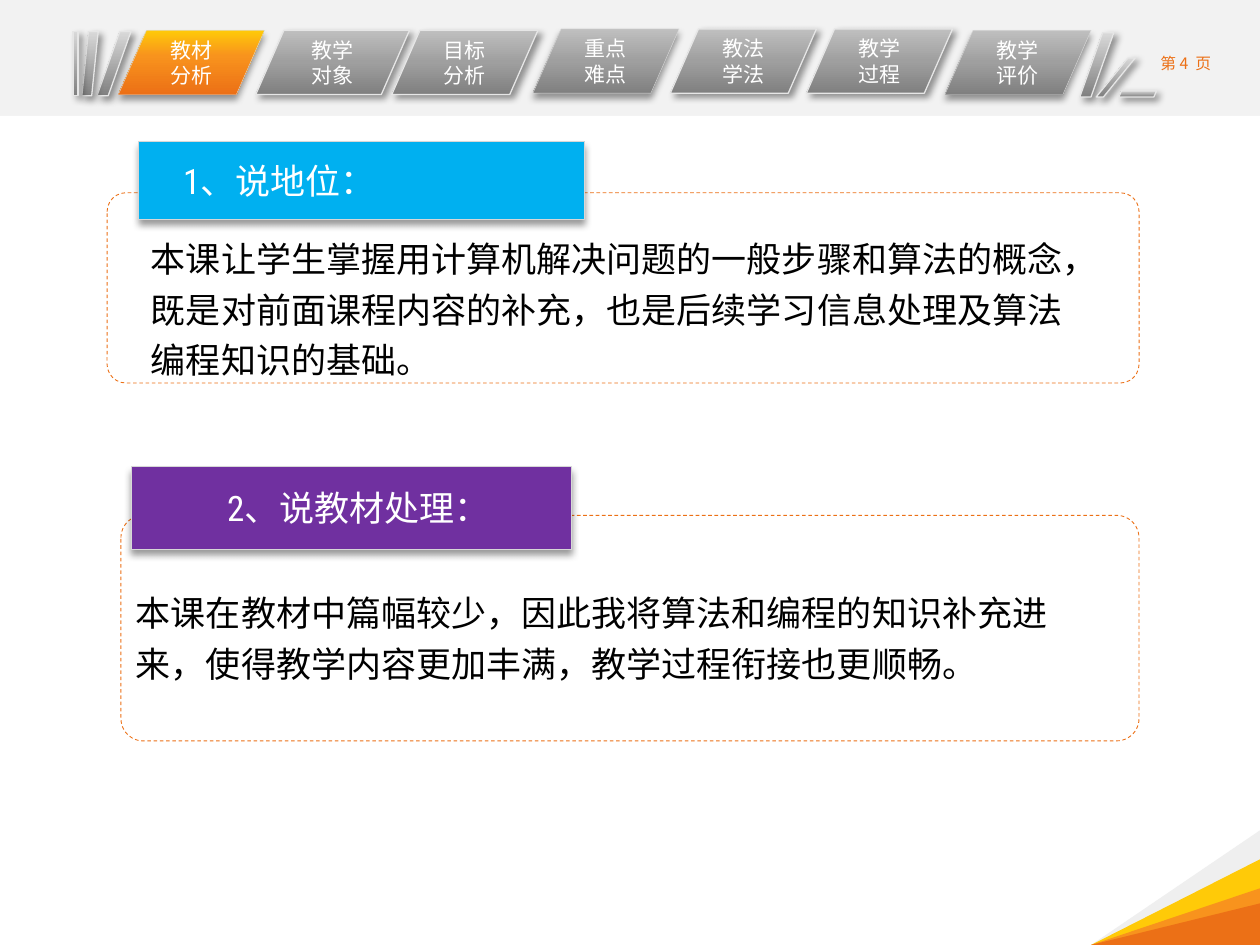
from dataclasses import dataclass

from lxml.etree import SubElement
from pptx import Presentation
from pptx.dml.color import RGBColor as Color
from pptx.enum.dml import MSO_LINE as Dash
from pptx.enum.shapes import MSO_SHAPE as Shape
from pptx.enum.text import MSO_ANCHOR as Anchor, MSO_AUTO_SIZE as AutoSize, PP_ALIGN as Align
from pptx.oxml.ns import qn
from pptx.util import Pt

PX = 9144  # 100 px to the inch
WIDTH, HEIGHT = 1000, 750


@dataclass(frozen=True)
class Theme:
    band: str = "F2F2F2"
    white: str = "FFFFFF"
    black: str = "000000"
    orange: str = "EC7016"
    blue: str = "00B0F0"
    purple: str = "7030A0"
    soft_line: tuple = ("E6E6E6", 0.75)
    fine_line: tuple = ("D7D7D7", 0.25)
    dash_line: tuple = ("EC7016", 0.5)
    bar: tuple = ((0, "808080"), (100, "D9D9D9"))
    tab: tuple = ((0, "BFBFBF"), (50, "9F9F9F"), (100, "808080"))
    active: tuple = ((0, "FFCA08"), (40, "F8931D"), (100, "EC7016"))
    rays: tuple = ("EFEFEF", "FFCA08", "F8931D", "EC7016")
    cjk: str = "Noto Sans CJK SC"
    latin: str = "Roboto Condensed"
    body: int = 20
    label: int = 12
    small: int = 9


def assign(target, values):
    for name, value in values.items():
        setattr(target, name, value)


class Painter:
    def __init__(self, deck, theme):
        self.theme = theme
        self.page = deck.slides.add_slide(deck.slide_layouts[6])
        self.canvas = self.page.shapes

    def background(self, color):
        fill = self.page.background.fill
        fill.solid()
        fill.fore_color.rgb = Color.from_string(color)

    def group(self):
        self.canvas = self.page.shapes.add_group_shape().shapes

    def shape(self, kind, at, fill=None, line=None, adjust=None, angle=90,
              shadow=None, dash=None, flip=False):
        box = self.canvas.add_shape(kind, *(value * PX for value in at))
        if adjust is not None:
            box.adjustments[0] = adjust
        if flip:
            box._element.spPr.find(qn("a:xfrm")).set("flipH", "1")
        if fill is None:
            box.fill.background()
        elif isinstance(fill, str):
            box.fill.solid()
            box.fill.fore_color.rgb = Color.from_string(fill)
        else:
            self.gradient(box, fill, angle)
        if line:
            box.line.color.rgb = Color.from_string(line[0])
            assign(box.line, {"width": Pt(line[1]), "dash_style": dash})
        else:
            box.line.fill.background()
        box.shadow.inherit = False
        if shadow is not None:
            self.shadow(box, shadow)
        return box

    def gradient(self, box, stops, angle):
        box.fill.gradient()
        box.fill.gradient_angle = 360 - angle
        listing = box._element.spPr.find(qn("a:gradFill")).find(qn("a:gsLst"))
        for stop in list(listing):
            listing.remove(stop)
        for position, color in stops:
            stop = SubElement(listing, qn("a:gs"), pos=str(position * 1000))
            SubElement(stop, qn("a:srgbClr"), val=color)

    def shadow(self, box, direction):
        effects = box._element.spPr.find(qn("a:effectLst"))
        outer = SubElement(effects, qn("a:outerShdw"), blurRad=str(Pt(4)), dist=str(Pt(3)),
                           dir=str(direction * 60000), algn="ctr", rotWithShape="0")
        color = SubElement(outer, qn("a:srgbClr"), val=self.theme.black)
        SubElement(color, qn("a:alpha"), val="40000")

    def letter(self, box, lines, size, color, font, align=Align.CENTER,
               anchor=Anchor.MIDDLE, left=10, right=10, spacing=None):
        frame = box.text_frame
        assign(frame, {"word_wrap": True, "vertical_anchor": anchor,
                       "margin_left": left * PX, "margin_right": right * PX,
                       "margin_top": 5 * PX, "margin_bottom": 5 * PX})
        for index, line in enumerate(lines):
            para = frame.add_paragraph() if index else frame.paragraphs[0]
            assign(para, {"alignment": align, "line_spacing": spacing})
            span = para.add_run()
            span.text = line
            assign(span.font, {"size": Pt(size), "name": font})
            span.font.color.rgb = Color.from_string(color)
            SubElement(span._r.get_or_add_rPr(), qn("a:ea"), typeface=self.theme.cjk)

    def text(self, at, lines, size, color, grow=False, **style):
        box = self.canvas.add_textbox(*(value * PX for value in at))
        self.letter(box, lines, size, color, self.theme.cjk, **style)
        if grow:
            box.text_frame.auto_size = AutoSize.SHAPE_TO_FIT_TEXT

    def bar(self, at, kind=Shape.PARALLELOGRAM, adjust=None):
        self.shape(kind, at, self.theme.bar, self.theme.soft_line, adjust, 270, 45)

    def tab(self, left, top, width, lines, fill, fine):
        theme = self.theme
        line, shadow, inset, font = ((theme.fine_line, 90, 0, theme.latin) if fine
                                     else (theme.soft_line, 45, 10, theme.cjk))
        box = self.shape(Shape.PARALLELOGRAM, (left, top, width, 51), fill, line, 0.438,
                         shadow=shadow)
        self.letter(box, lines, theme.label, theme.white, font, left=inset, right=inset)

    def section(self, frame, banner, fill, heading, align, indent, body_at, body):
        theme = self.theme
        self.group()
        self.shape(Shape.ROUNDED_RECTANGLE, frame, line=theme.dash_line, adjust=0.099,
                   dash=Dash.DASH)
        box = self.shape(Shape.PARALLELOGRAM, banner, fill, theme.fine_line, 0, shadow=90)
        self.letter(box, [heading], theme.body, theme.white, theme.latin, align,
                    left=indent, right=0)
        self.text(body_at, [body], theme.body, theme.black, grow=True, align=Align.LEFT,
                  anchor=Anchor.TOP, spacing=1.2)


def main():
    theme = Theme()
    deck = Presentation()
    assign(deck, {"slide_width": WIDTH * PX, "slide_height": HEIGHT * PX})
    painter = Painter(deck, theme)

    # Grey header band above the white page
    painter.background(theme.band)
    painter.shape(Shape.RECTANGLE, (0, 92, WIDTH, HEIGHT - 92), theme.white)

    # Slanted bars at both ends of the navigation
    painter.bar((77, 25, 27, 51), adjust=0.67)
    painter.bar((65, 25, 13, 51), adjust=0.4)
    painter.bar((58, 25, 4, 51), Shape.RECTANGLE)
    painter.bar((857, 26, 27, 51), adjust=0.67)
    painter.bar((870, 46, 31, 31), adjust=0.814)
    painter.bar((888, 72, 30, 5), adjust=0.438)

    # Navigation tabs: left, top, width, words, fill, fine edge
    for tab in (
        (94, 24, 116, ("教材", "分析"), theme.active, True),
        (203, 24, 122, ("教学", "对象"), theme.tab, False),
        (311, 24, 116, ("目标", "分析"), theme.tab, False),
        (423, 23, 116, ("重点", "难点"), theme.tab, True),
        (532, 23, 116, ("教法", "学法"), theme.tab, False),
        (640, 23, 116, ("教学", "过程"), theme.tab, False),
        (750, 24, 116, ("教学", "评价"), theme.tab, True),
    ):
        painter.tab(*tab)

    # Page number
    painter.text((903, 34, 73, 33), ["第 4  页"], theme.small, theme.orange, left=13)

    # Corner rays
    painter.group()
    for top, color in zip((659, 682, 705, 717), theme.rays):
        painter.shape(Shape.ISOSCELES_TRIANGLE, (866, top, 134, HEIGHT - top), color,
                      adjust=0, flip=True)

    # Two sections, each with a banner and a dashed frame
    painter.section((85, 153, 819, 151), (110, 112, 354, 62), theme.blue,
                    "1、说地位：", Align.LEFT, 6, (110, 177, 754, 131),
                    "本课让学生掌握用计算机解决问题的一般步骤和算法的概念，"
                    "既是对前面课程内容的补充，也是后续学习信息处理及算法编程知识的基础。")
    painter.section((96, 409, 808, 179), (104, 370, 349, 66), theme.purple,
                    "2、说教材处理：", Align.CENTER, 12, (98, 458, 745, 87),
                    "本课在教材中篇幅较少，因此我将算法和编程的知识补充进来，"
                    "使得教学内容更加丰满，教学过程衔接也更顺畅。")

    deck.save("out.pptx")


if __name__ == "__main__":
    main()
